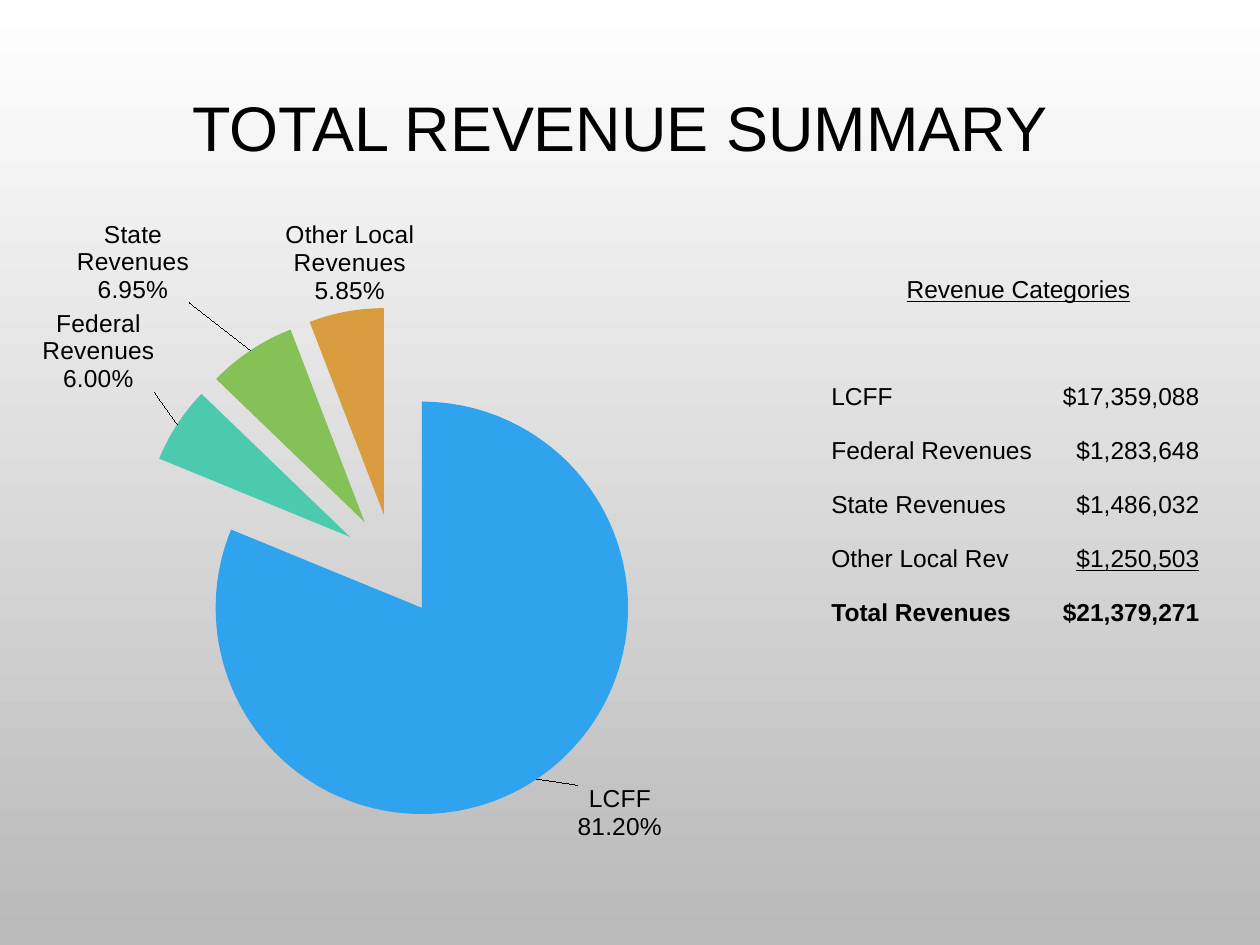
from lxml import etree
from pptx import Presentation
from pptx import util as u
from pptx.chart import data
from pptx.dml import color
from pptx.enum import chart as ch, text
from pptx.oxml import ns

HUE = {"ink": "000000", "top": "FFFFFF", "base": "B9B9B9",
       "lcff": "2FA3EE", "fed": "4BCAAD", "state": "86C157", "local": "D99C3F"}


def style(run, size, bold=False, under=False):
    run.font.name = "Arial"
    run.font.size = u.Pt(size)
    run.font.bold = bold
    run.font.underline = under
    run.font.color.rgb = color.RGBColor.from_string(HUE["ink"])


def layout(**vals):
    node = etree.Element(ns.qn("c:layout"))
    man = etree.SubElement(node, ns.qn("c:manualLayout"))
    for key, val in vals.items():
        etree.SubElement(man, ns.qn("c:" + key)).set("val", str(val))
    return node


prs = Presentation()
prs.slide_width, prs.slide_height = u.Cm(25.4), u.Cm(19.05)
slide = prs.slides.add_slide(prs.slide_layouts[6])
fill = slide.background.fill
fill.gradient()
fill.gradient_angle = 270
for stop, key in zip(fill.gradient_stops, ("top", "base")):
    stop.color.rgb = color.RGBColor.from_string(HUE[key])

box = slide.shapes.add_textbox(u.Cm(1.07), u.Cm(1.7), u.Cm(22.86), u.Cm(1.9))
frame = box.text_frame
frame.word_wrap = True
frame.vertical_anchor = text.MSO_ANCHOR.MIDDLE
para = frame.paragraphs[0]
para.alignment = text.PP_ALIGN.CENTER
para.line_spacing = 0.9
run = para.add_run()
run.text = "TOTAL REVENUE SUMMARY"
style(run, 36)

parts = [
    ("lcff", 17359088, "LCFF", "81.20%", 0.045, 0),
    ("fed", 1283648, "Federal Revenues", "6.00%", -0.02, -0.04),
    ("state", 1486032, "State Revenues", "6.95%", -0.07, -0.06),
    ("local", 1250503, "Other Local Revenues", "5.85%", 0.085, 0),
]
info = data.CategoryChartData(number_format='"$"#,##0')
info.categories = ["1", "2", "3", "4"]
info.add_series("Series 1", [part[1] for part in parts])
chart = slide.shapes.add_chart(ch.XL_CHART_TYPE.PIE, u.Cm(0.2), u.Cm(4.45),
                               u.Cm(16.51), u.Cm(13.97), info).chart
chart.has_legend = False
chart.has_title = False
chart.font.name = "Calibri"
chart.font.size = u.Pt(18)
chart.font.color.rgb = color.RGBColor.from_string(HUE["ink"])
area = chart._chartSpace.chart.plotArea
for old in area.findall(ns.qn("c:layout")):
    area.remove(old)
area.insert(0, layout(layoutTarget="inner", xMode="edge", yMode="edge",
                      x=0.09, y=0.125, w=0.756, h=0.744))

plot = chart.plots[0]
plot.vary_by_categories = True
pie = plot.series[0]
pie.format.line.fill.background()
burst = etree.Element(ns.qn("c:explosion"))
burst.set("val", "25")
pie._element.find(ns.qn("c:spPr")).addnext(burst)
tags = pie.data_labels
tags.show_value = True
tags.position = ch.XL_LABEL_POSITION.OUTSIDE_END
tags.font.name = "Arial"
tags.font.size = u.Pt(14)

for num, (key, val, name, share, dx, dy) in enumerate(parts):
    point = pie.points[num]
    point.format.fill.solid()
    point.format.fill.fore_color.rgb = color.RGBColor.from_string(HUE[key])
    point.format.line.fill.background()
    label = point.data_label
    frame = label.text_frame
    for para, line in zip((frame.paragraphs[0], frame.add_paragraph()), (name, share)):
        run = para.add_run()
        run.text = line
        style(run, 14)
    label.position = ch.XL_LABEL_POSITION.OUTSIDE_END
    mark = pie._element.find(ns.qn("c:dLbls")).findall(ns.qn("c:dLbl"))[num]
    for old in mark.findall(ns.qn("c:layout")):
        mark.remove(old)
    mark.find(ns.qn("c:idx")).addnext(layout(x=dx, y=dy))

box = slide.shapes.add_textbox(u.Cm(16.51), u.Cm(5.28), u.Cm(8.05), u.Cm(11.3))
frame = box.text_frame
frame.word_wrap = True
para = frame.paragraphs[0]
para.alignment = text.PP_ALIGN.CENTER
para.line_spacing = 1.2
run = para.add_run()
run.text = "Revenue Categories"
style(run, 14, under=True)

rows = [
    ("LCFF", "$17,359,088"),
    ("Federal Revenues", "$1,283,648"),
    ("State Revenues", "$1,486,032"),
    ("Other Local Rev", "$1,250,503"),
    ("Total Revenues", "$21,379,271"),
]
for num, (name, cash) in enumerate(rows):
    para = frame.add_paragraph()
    para.line_spacing = 1.2
    para.space_before = u.Pt(10.8 if num else 40.8)
    tabs = etree.SubElement(para._p.get_or_add_pPr(), ns.qn("a:tabLst"))
    tab = etree.SubElement(tabs, ns.qn("a:tab"))
    tab.set("pos", str(u.Cm(7.42)))
    tab.set("algn", "r")
    for line, under in ((name + "\t", False), (cash, num == 3)):
        run = para.add_run()
        run.text = line
        style(run, 14, num == 4, under)

prs.save("out.pptx")
